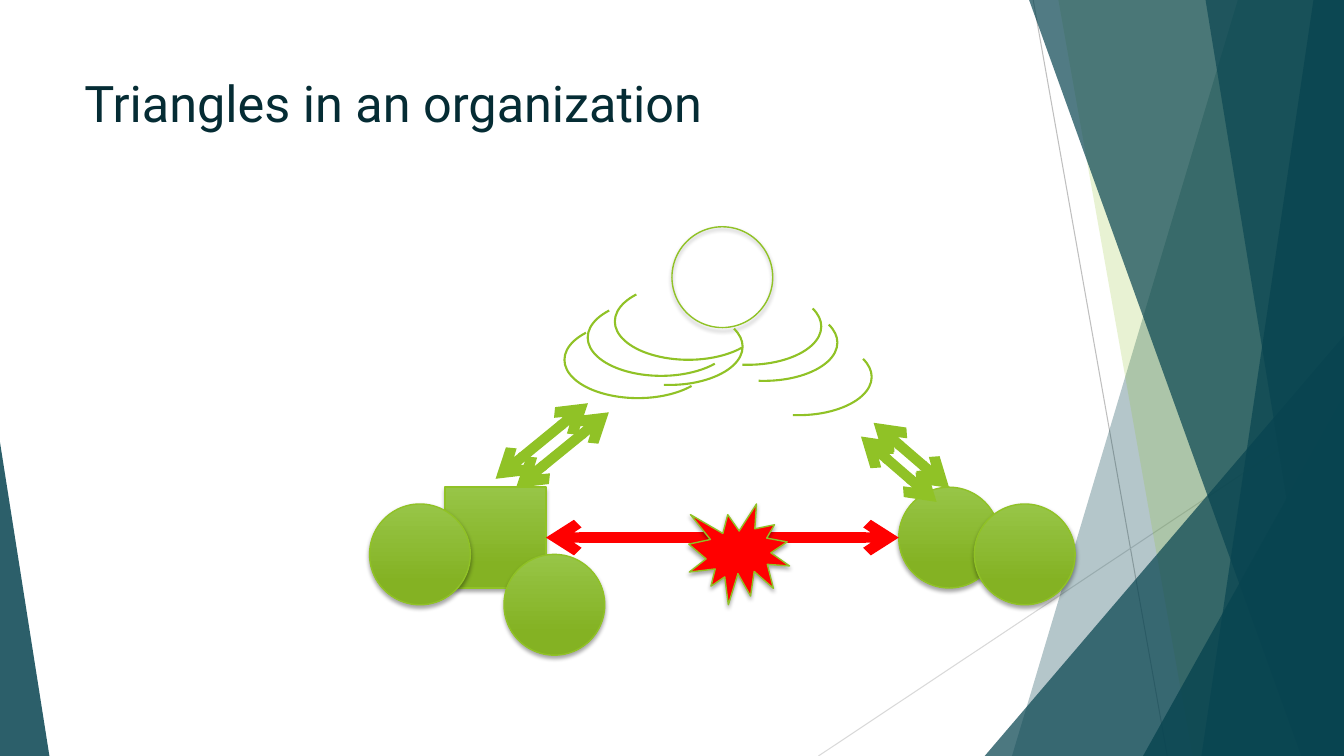
from dataclasses import dataclass

from lxml import etree
from pptx import Presentation
from pptx.dml.color import RGBColor
from pptx.enum import shapes, text
from pptx.oxml import ns
from pptx.util import Pt

KIND = shapes.MSO_SHAPE
HUES = {
    "teal": "084450", "lime": "90C226", "light": "97C547", "dark": "84B223",
    "red": "FF0000", "ink": "052C34", "gray": "BFBFBF", "pale": "D9D9D9",
    "black": "000000",
}
WIDE, HIGH = 960, 540
SIDE = 72
ARC_W, ARC_H = 105, 54.7


@dataclass
class Pane:
    """Four-sided pane from slide top to bottom, given by its two x pairs."""
    top: tuple
    foot: tuple
    hue: str
    alpha: int


@dataclass
class Wedge:
    left: float
    top: float
    width: float
    height: float
    apex: float
    alpha: int


@dataclass
class Node:
    left: float
    top: float
    kind: int = KIND.OVAL
    fill: str = "blend"


@dataclass
class Line:
    start: tuple
    end: tuple
    hue: str = "lime"
    width: float = 7.25
    heads: bool = True


@dataclass
class Wave:
    left: float
    top: float
    span: tuple


def color(hue: str) -> RGBColor:
    return RGBColor.from_string(HUES[hue])


def add(parent, tag: str, **attrs):
    return etree.SubElement(parent, ns.qn(tag), attrs)


def tint(shape, hue: str, alpha: int) -> None:
    shape.shadow.inherit = False
    shape.fill.solid()
    shape.fill.fore_color.rgb = color(hue)
    shape.line.fill.background()
    tone = shape.fill._xPr.find(".//" + ns.qn("a:srgbClr"))
    add(tone, "a:alpha", val=str(alpha * 1000))


def draw_pane(tree, pane: Pane) -> None:
    dots = [(pane.top[1], 0), (pane.foot[1], HIGH), (pane.foot[0], HIGH)]
    form = tree.build_freeform(Pt(pane.top[0]), 0, 1.0)
    form.add_line_segments([(Pt(x), Pt(y)) for x, y in dots])
    tint(form.convert_to_shape(), pane.hue, pane.alpha)


def draw_wedge(tree, wedge: Wedge) -> None:
    shape = tree.add_shape(KIND.ISOSCELES_TRIANGLE, Pt(wedge.left), Pt(wedge.top),
                           Pt(wedge.width), Pt(wedge.height))
    shape.adjustments[0] = wedge.apex
    tint(shape, "teal", wedge.alpha)


def draw_node(tree, node: Node):
    shape = tree.add_shape(node.kind, Pt(node.left), Pt(node.top), Pt(SIDE), Pt(SIDE))
    if node.fill == "none":
        shape.fill.background()
    elif node.fill == "blend":
        shape.fill.gradient()
        shape.fill.gradient_angle = 270
        for stop, hue, spot in zip(shape.fill.gradient_stops, ("light", "dark"), (0, 0.78)):
            stop.color.rgb = color(hue)
            stop.position = spot
    else:
        shape.fill.solid()
        shape.fill.fore_color.rgb = color(node.fill)
    shape.line.color.rgb = color("lime")
    shape.line.width = Pt(1)
    shape.shadow.inherit = False
    glow = shape._element.spPr.find(ns.qn("a:effectLst"))
    cast = add(glow, "a:outerShdw", blurRad=str(Pt(3)), dist=str(Pt(2)),
               dir="5400000", rotWithShape="0")
    add(add(cast, "a:srgbClr", val=HUES["black"]), "a:alpha", val="35000")
    return shape


def draw_line(tree, line: Line):
    link = tree.add_connector(shapes.MSO_CONNECTOR.STRAIGHT,
                              *(Pt(v) for v in line.start + line.end))
    link.line.color.rgb = color(line.hue)
    link.line.width = Pt(line.width)
    if line.heads:
        stroke = link.line._get_or_add_ln()
        for tag in ("a:headEnd", "a:tailEnd"):
            add(stroke, tag, type="arrow")
    add(link._element.spPr, "a:effectLst")
    return link


def draw_wave(tree, wave: Wave) -> None:
    arc = tree.add_shape(KIND.ARC, Pt(wave.left), Pt(wave.top), Pt(ARC_W), Pt(ARC_H))
    for i, angle in enumerate(wave.span):
        arc.adjustments[i] = angle * 0.6  # degrees to adjustment units
    arc.fill.background()
    arc.line.color.rgb = color("lime")
    arc.line.width = Pt(1.5)
    arc.shadow.inherit = False


RAYS = [
    Line((738, 0), (833.8, HIGH), "gray", 0.75, False),
    Line((WIDE, 290.2), (584.6, HIGH), "pale", 0.75, False),
]
DECOR = [
    Pane((884.2, WIDE), (722.9, WIDE), "teal", 30),
    Pane((756, WIDE), (851.8, WIDE), "lime", 20),
    Wedge(703.4, 239.8, 256.6, 300.2, 1, 72),
    Pane((735.1, WIDE), (929.5, WIDE), "teal", 70),
    Pane((938.2, WIDE), (858.2, WIDE), "teal", 70),
    Pane((861.1, WIDE), (949, WIDE), "teal", 65),
    Wedge(816.5, 283, 143.5, 257, 1, 80),
    Wedge(0, 316, 35.3, 224, 0, 85),
]
BACK = [Node(480, 162, fill="none"), Node(642, 348)]
BOX = Node(318, 348, KIND.RECTANGLE)
CLASH = Line((390, 384), (642, 384), "red")
OUTER = [Line((624, 302), (678, 348.5)), Line((354, 342), (420, 288))]
FRONT = [Node(696, 360), Node(264, 360), Node(360, 396),
         Node(492, 360, KIND.EXPLOSION1, "red")]
INNER = [Line((368.6, 348.5), (434.9, 294.5)), Line((615, 311.8), (669, 358.5))]
EAST, WEST = (344.5, 98), (26, 207.5)
WAVES = [
    Wave(481.7, 205.9, EAST), Wave(493.2, 217.4, EAST), Wave(425.5, 220.3, EAST),
    Wave(439.2, 202.3, WEST), Wave(517.7, 241.9, EAST),
    Wave(419.8, 213.8, WEST), Wave(403.2, 229.7, WEST),
]


def main() -> None:
    deck = Presentation()
    deck.slide_width, deck.slide_height = Pt(WIDE), Pt(HIGH)
    tree = deck.slides.add_slide(deck.slide_layouts[6]).shapes

    # Background rays and panes
    for ray in RAYS:
        draw_line(tree, ray)
    for part in DECOR:
        if isinstance(part, Pane):
            draw_pane(tree, part)
        else:
            draw_wedge(tree, part)

    # Title
    title = tree.add_textbox(Pt(53.3), Pt(48.2), Pt(676.8), Pt(103.7))
    frame = title.text_frame
    frame.word_wrap = True
    frame.vertical_anchor = text.MSO_ANCHOR.TOP
    para = frame.paragraphs[0]
    para.text = "Triangles in an organization"
    para.font.name = "Roboto"
    para.font.size = Pt(36)
    para.font.color.rgb = color("ink")

    # Groups and the links between them
    for node in BACK:
        draw_node(tree, node)
    box = draw_node(tree, BOX)
    draw_line(tree, CLASH).begin_connect(box, 3)
    for line in OUTER:
        draw_line(tree, line)
    for node in FRONT:
        draw_node(tree, node)
    for line in INNER:
        draw_line(tree, line)

    # Waves around the top circle
    for wave in WAVES:
        draw_wave(tree, wave)

    deck.save("out.pptx")


if __name__ == "__main__":
    main()
